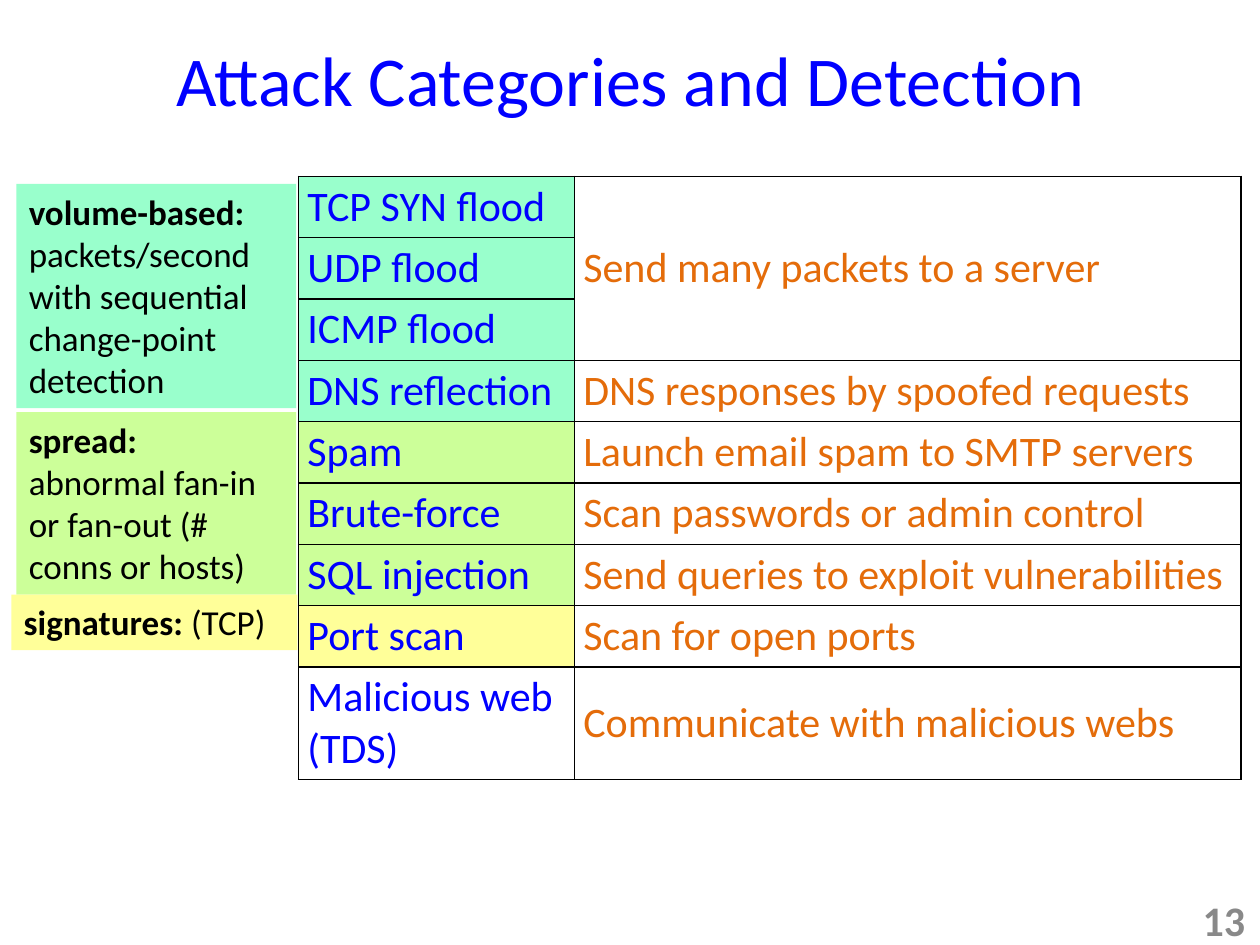
from typing import NamedTuple, Optional

from lxml.etree import SubElement
from pptx import Presentation
from pptx.dml.color import RGBColor
from pptx.enum.shapes import MSO_SHAPE
from pptx.enum.text import MSO_ANCHOR, PP_ALIGN
from pptx.oxml.ns import qn
from pptx.util import Inches, Pt

FONT = "Calibri"
BLUE = RGBColor(0x00, 0x00, 0xFF)
ORANGE = RGBColor(0xE4, 0x6C, 0x0A)
BLACK = RGBColor(0x00, 0x00, 0x00)
GRAY = RGBColor(0x89, 0x89, 0x89)
MINT = RGBColor(0x99, 0xFF, 0xCC)
LIME = RGBColor(0xCC, 0xFF, 0x99)
YELLOW = RGBColor(0xFF, 0xFF, 0x99)

COLUMN_WIDTHS = (2.19, 5.29)
ROW_HEIGHT = 0.48
LAST_ROW_HEIGHT = 0.89
FLOOD_ROWS = 3


class Detection(NamedTuple):
    left: float
    top: float
    width: float
    height: float
    fill: RGBColor
    paragraphs: tuple  # each paragraph is (bold text, plain text)


class Attack(NamedTuple):
    name: str
    behavior: str
    fill: Optional[RGBColor]
    anchor: MSO_ANCHOR = MSO_ANCHOR.TOP


DETECTIONS = (
    Detection(0.13, 1.46, 2.22, 1.78, MINT, (
        ("volume-based: ", "packets/second with sequential change-point detection"),
    )),
    Detection(0.13, 3.27, 2.22, 1.45, LIME, (
        ("spread:", ""),
        ("", "abnormal fan-in or fan-out (# conns or hosts)"),
    )),
    Detection(0.09, 4.72, 2.27, 0.44, YELLOW, (("signatures: ", "(TCP)"),)),
)

ATTACKS = (
    Attack("TCP SYN flood", "Send many packets to a server", MINT, MSO_ANCHOR.MIDDLE),
    Attack("UDP flood", "", MINT),
    Attack("ICMP flood", "", MINT),
    Attack("DNS reflection", "DNS responses by spoofed requests", MINT),
    Attack("Spam", "Launch email spam to SMTP servers", LIME),
    Attack("Brute-force", "Scan passwords or admin control", LIME),
    Attack("SQL injection", "Send queries to exploit vulnerabilities", LIME),
    Attack("Port scan", "Scan for open ports", YELLOW),
    Attack("Malicious web\n(TDS)", "Communicate with malicious webs", None, MSO_ANCHOR.MIDDLE),
)


def set_font(font, size: float, color: RGBColor) -> None:
    font.name = FONT
    font.size = Pt(size)
    font.color.rgb = color


def add_detection(slide, detection: Detection) -> None:
    bounds = (detection.left, detection.top, detection.width, detection.height)
    shape = slide.shapes.add_shape(MSO_SHAPE.RECTANGLE, *map(Inches, bounds))
    shape.shadow.inherit = False
    shape.fill.solid()
    shape.fill.fore_color.rgb = detection.fill
    shape.line.fill.background()
    frame = shape.text_frame
    frame.word_wrap = True
    frame.vertical_anchor = MSO_ANCHOR.TOP
    for index, texts in enumerate(detection.paragraphs):
        paragraph = frame.add_paragraph() if index else frame.paragraphs[0]
        paragraph.alignment = PP_ALIGN.LEFT
        set_font(paragraph.font, 20, BLACK)
        for text, bold in zip(texts, (True, False)):
            if text:
                run = paragraph.add_run()
                run.text = text
                run.font.bold = bold


def add_borders(cell) -> None:
    properties = cell._tc.get_or_add_tcPr()
    for index, side in enumerate(("a:lnL", "a:lnR", "a:lnT", "a:lnB")):
        line = SubElement(properties, qn(side), w=str(Pt(1)))
        SubElement(SubElement(line, qn("a:solidFill")), qn("a:srgbClr"), val=str(BLACK))
        properties.insert(index, line)


def fill_cell(cell, text: str, color: RGBColor, fill: Optional[RGBColor], anchor: MSO_ANCHOR) -> None:
    cell.text = text
    cell.margin_left = cell.margin_right = Inches(0.07)
    cell.margin_top = cell.margin_bottom = Inches(0.04)
    cell.vertical_anchor = anchor
    for paragraph in cell.text_frame.paragraphs:
        set_font(paragraph.font, 24, color)
    if fill is None:
        cell.fill.background()
    else:
        cell.fill.solid()
        cell.fill.fore_color.rgb = fill
    add_borders(cell)


def add_attack_table(slide) -> None:
    height = ROW_HEIGHT * (len(ATTACKS) - 1) + LAST_ROW_HEIGHT
    table = slide.shapes.add_table(
        len(ATTACKS), len(COLUMN_WIDTHS),
        Inches(2.37), Inches(1.4), Inches(sum(COLUMN_WIDTHS)), Inches(height),
    ).table
    table.first_row = table.horz_banding = False
    for column, width in zip(table.columns, COLUMN_WIDTHS):
        column.width = Inches(width)
    for index, attack in enumerate(ATTACKS):
        table.rows[index].height = Inches(ROW_HEIGHT)
        fill_cell(table.cell(index, 0), attack.name, BLUE, attack.fill, MSO_ANCHOR.TOP)
        fill_cell(table.cell(index, 1), attack.behavior, ORANGE, None, attack.anchor)
    table.rows[len(ATTACKS) - 1].height = Inches(LAST_ROW_HEIGHT)
    table.cell(0, 1).merge(table.cell(FLOOD_ROWS - 1, 1))


def add_title(slide) -> None:
    title = slide.shapes.title
    title.left, title.top, title.width, title.height = map(Inches, (0, 0, 10, 1.25))
    title.text_frame.text = "Attack Categories and Detection"
    title.text_frame.vertical_anchor = MSO_ANCHOR.MIDDLE
    paragraph = title.text_frame.paragraphs[0]
    paragraph.alignment = PP_ALIGN.CENTER
    set_font(paragraph.font, 40, BLUE)


def add_page_number(slide) -> None:
    box = slide.shapes.add_textbox(*map(Inches, (7.65, 7.1, 2.33, 0.4)))
    frame = box.text_frame
    frame.word_wrap = True
    frame.vertical_anchor = MSO_ANCHOR.MIDDLE
    frame.text = "13"
    paragraph = frame.paragraphs[0]
    paragraph.alignment = PP_ALIGN.RIGHT
    set_font(paragraph.font, 24, GRAY)
    paragraph.font.bold = True


def main() -> None:
    presentation = Presentation()
    presentation.slide_width = Inches(10)
    presentation.slide_height = Inches(7.5)
    slide = presentation.slides.add_slide(presentation.slide_layouts.get_by_name("Title Only"))
    add_title(slide)
    for detection in DETECTIONS:
        add_detection(slide, detection)
    add_attack_table(slide)
    add_page_number(slide)
    presentation.save("out.pptx")


if __name__ == "__main__":
    main()
